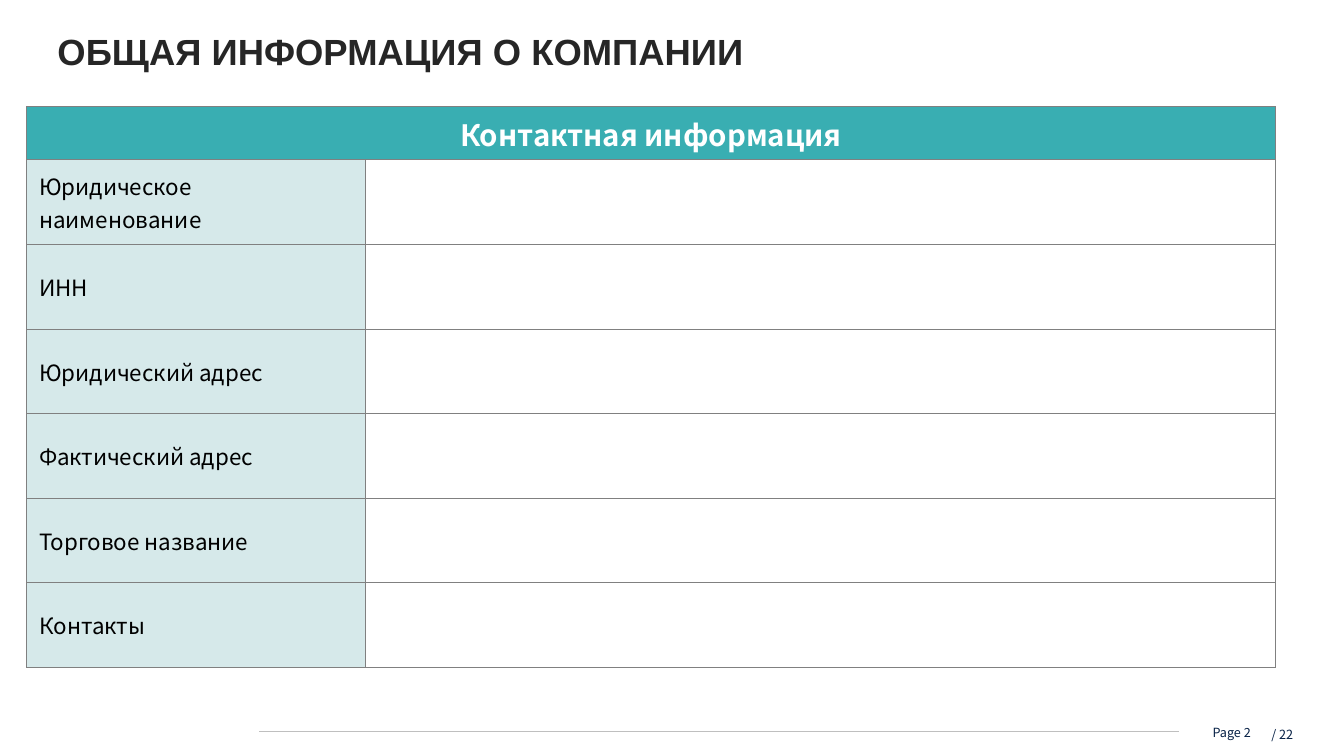
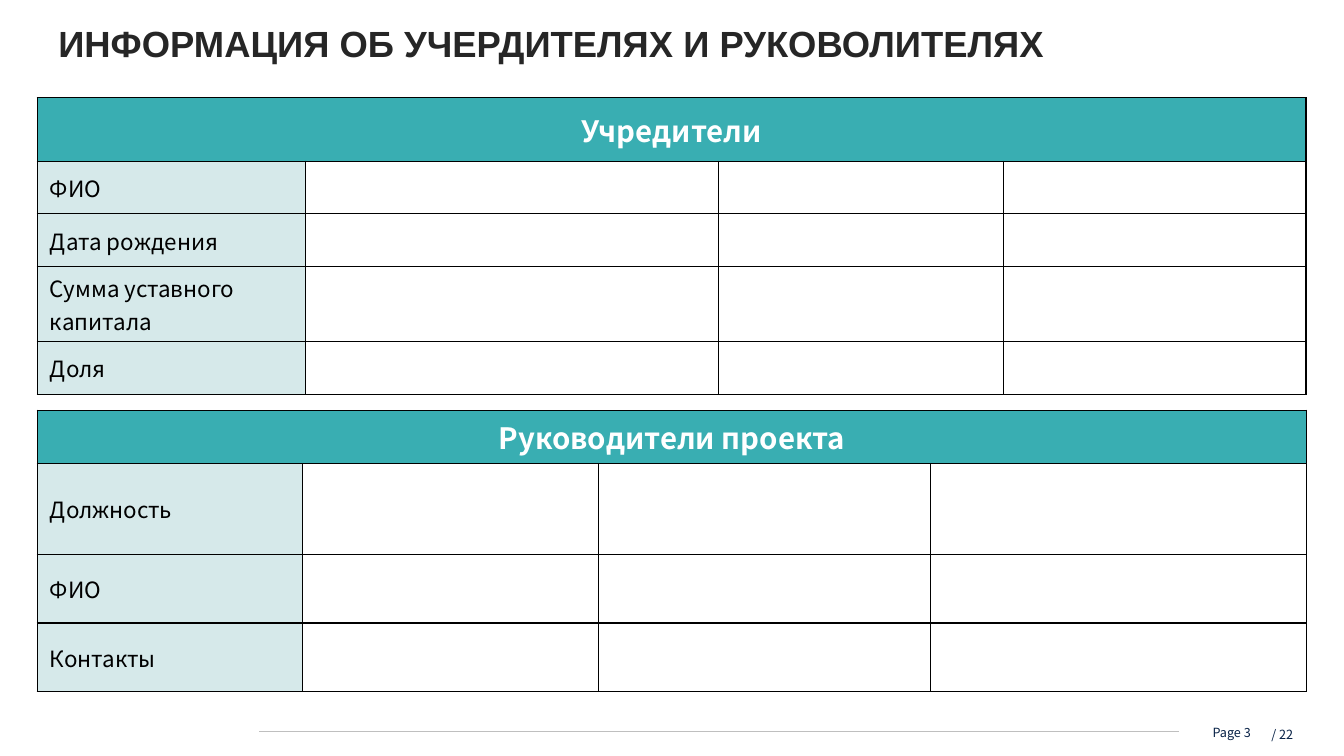
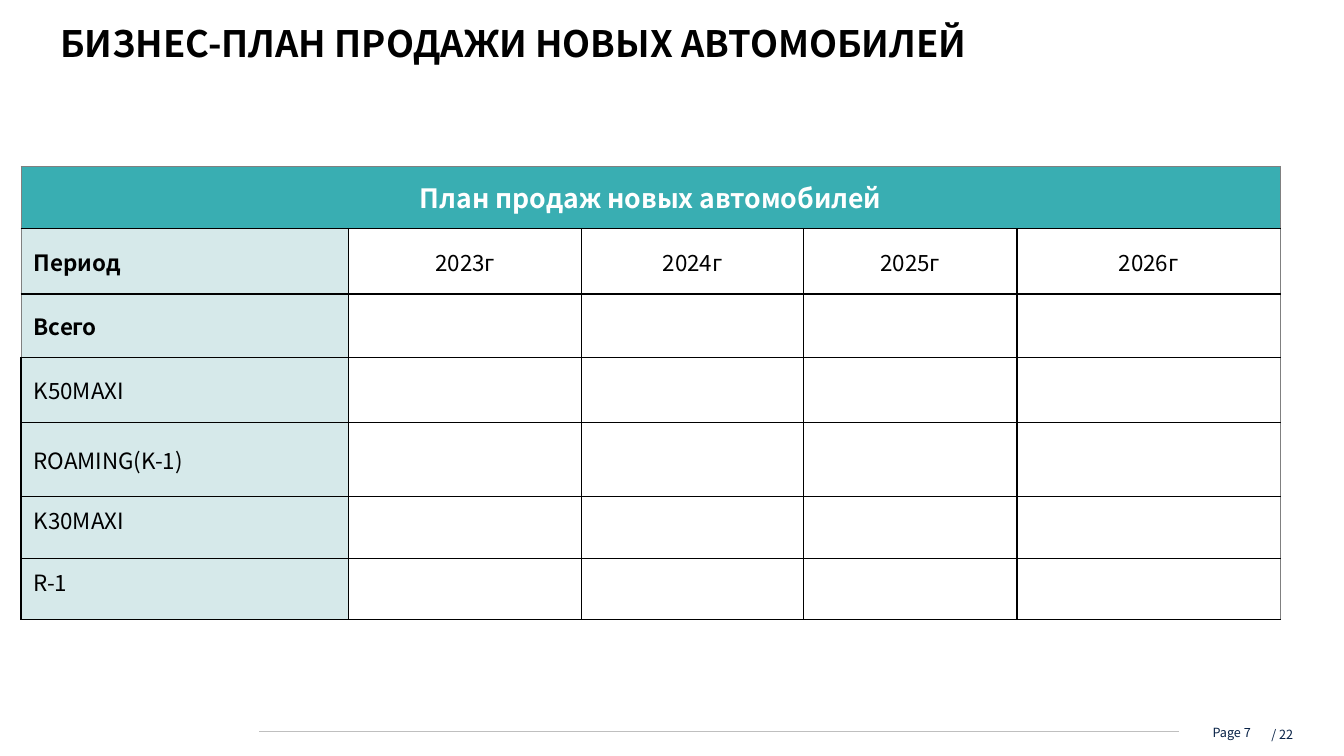
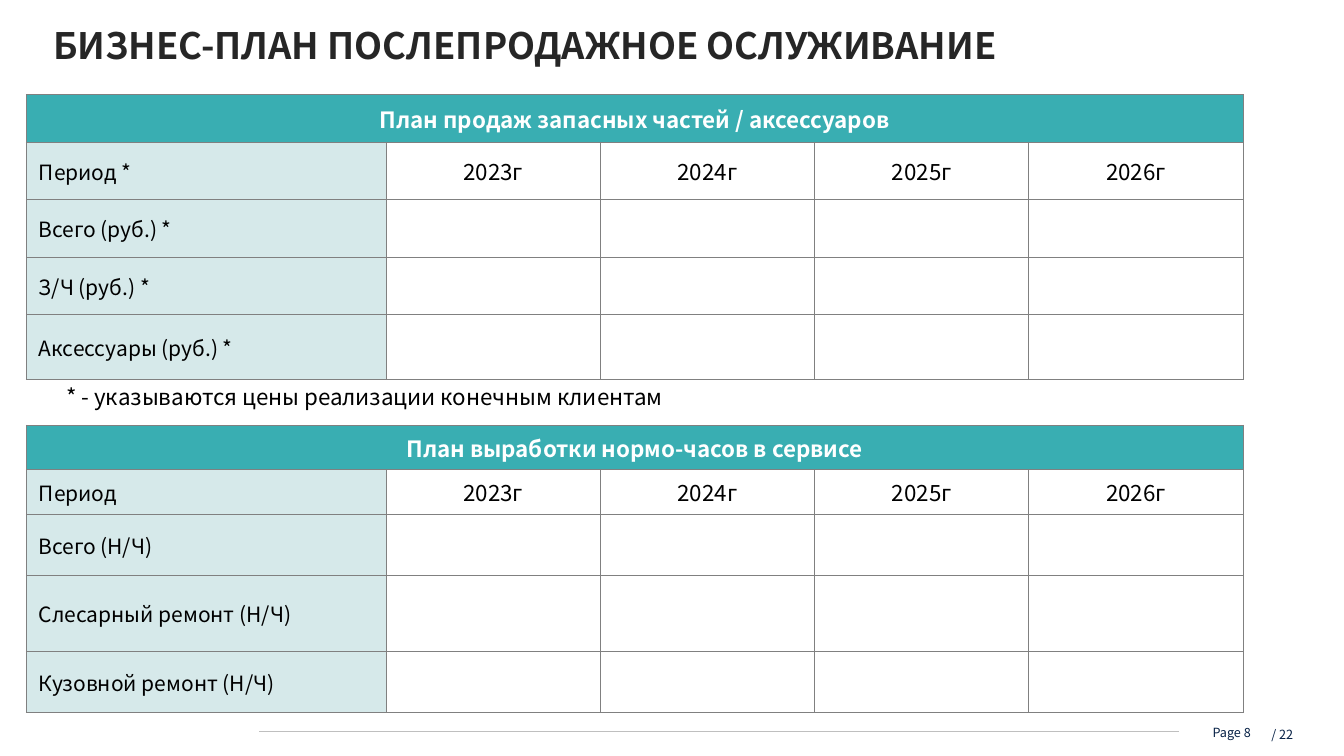
from dataclasses import dataclass

import pptx
import pptx.dml.color
import pptx.enum.shapes
import pptx.enum.text
import pptx.presentation
import pptx.shapes.connector
import pptx.slide
import pptx.table
import pptx.text.text
import pptx.util
from lxml import etree
from pptx.oxml.ns import qn
from pptx.util import Cm

SANS, HEADING = "Noto Sans CJK SC", "Arial"
TEAL, PALE, WHITE, BLACK = "39AEB2", "D6E9EA", "FFFFFF", "000000"
INK, NAVY, GREY, RULE = "262626", "072146", "808080", "BFBFBF"
LEFT = pptx.enum.text.PP_ALIGN.LEFT
CENTER = pptx.enum.text.PP_ALIGN.CENTER
RIGHT = pptx.enum.text.PP_ALIGN.RIGHT
MIDDLE = pptx.enum.text.MSO_ANCHOR.MIDDLE
PAGE_TOTAL = 22
YEARS = ("2023г", "2024г", "2025г", "2026г")


@dataclass(frozen=True)
class Row:
    label: str
    height: float
    values: tuple[str, ...] = ()
    bold: bool = False
    line_points: float | None = None


@dataclass(frozen=True)
class Form:
    """A table with a merged heading, a label column and cells to fill in (cm)."""
    heading: str
    left: float
    top: float
    columns: tuple[float, ...]
    heading_height: float
    rows: tuple[Row, ...]
    heading_size: float = 21
    label_size: float = 16
    border: str = GREY
    grey_left_rows: int = 0  # with a black grid: rows whose outer left edge is grey


@dataclass(frozen=True)
class Title:
    text: str
    left: float
    top: float
    font: str = SANS
    color: str = INK
    spacing: float | None = None


@dataclass(frozen=True)
class Note:
    text: str
    left: float
    top: float
    width: float


@dataclass(frozen=True)
class Page:
    number: int
    title: Title
    forms: tuple[Form, ...]
    notes: tuple[Note, ...] = ()


def rgb(color: str) -> pptx.dml.color.RGBColor:
    return pptx.dml.color.RGBColor.from_string(color)


def write(frame: pptx.text.text.TextFrame, text: str, *, size: float,
          font: str = SANS, color: str = BLACK, bold: bool = False,
          align=LEFT, spacing=None) -> None:
    para = frame.paragraphs[0]
    para.alignment = align
    if spacing is not None:
        para.line_spacing = spacing
    span = para.add_run()
    span.text = text
    span.font.name = font
    span.font.size = pptx.util.Pt(size)
    span.font.bold = bold
    span.font.color.rgb = rgb(color)


def add_text(slide: pptx.slide.Slide, text: str, left: float, top: float,
             width: float, height: float, *, inset: tuple[float, float] = (0.25, 0.13),
             wrap: bool = True, **text_format) -> None:
    box = slide.shapes.add_textbox(Cm(left), Cm(top), Cm(width), Cm(height))
    frame = box.text_frame
    frame.word_wrap = wrap
    frame.margin_left = frame.margin_right = Cm(inset[0])
    frame.margin_top = frame.margin_bottom = Cm(inset[1])
    write(frame, text, **text_format)


def set_borders(cell: pptx.table._Cell, colors: dict[str, str]) -> None:
    """Draw cell sides; colors maps L, R, T, B to a colour."""
    properties = cell._tc.get_or_add_tcPr()
    for position, (side, color) in enumerate(colors.items()):
        points = 0.75 if color == GREY else 1
        line = etree.Element(qn(f"a:ln{side}"), w=str(pptx.util.Pt(points)))
        fill = etree.SubElement(line, qn("a:solidFill"))
        etree.SubElement(fill, qn("a:srgbClr"), val=color)
        properties.insert(position, line)


def border_colors(form: Form, row: int, column: int) -> dict[str, str]:
    colors = dict.fromkeys("LRTB", form.border)
    if form.grey_left_rows:
        if row == 0:
            colors["T"] = GREY
        if column == 0 and row < form.grey_left_rows:
            colors["L"] = GREY
        if column == len(form.columns) - 1 or row == 0:
            colors["R"] = GREY
    return colors


def add_form(slide: pptx.slide.Slide, form: Form) -> None:
    heights = [form.heading_height] + [row.height for row in form.rows]
    table = slide.shapes.add_table(
        len(heights), len(form.columns), Cm(form.left), Cm(form.top),
        Cm(sum(form.columns)), Cm(sum(heights))).table
    table.first_row = table.horz_banding = False
    for column, width in zip(table.columns, form.columns):
        column.width = Cm(width)
    for line, height in zip(table.rows, heights):
        line.height = Cm(height)

    for r in range(len(heights)):
        for c in range(len(form.columns)):
            cell = table.cell(r, c)
            cell.margin_left = cell.margin_right = Cm(0.32)
            cell.margin_top = cell.margin_bottom = Cm(0.13)
            cell.vertical_anchor = MIDDLE
            cell.fill.solid()
            cell.fill.fore_color.rgb = rgb(TEAL if r == 0 else PALE if c == 0 else WHITE)
            set_borders(cell, border_colors(form, r, c))

    heading = table.cell(0, 0)
    heading.merge(table.cell(0, len(form.columns) - 1))
    write(heading.text_frame, form.heading, size=form.heading_size,
          color=WHITE, bold=True, align=CENTER)
    for r, row in enumerate(form.rows, start=1):
        spacing = pptx.util.Pt(row.line_points) if row.line_points else None
        write(table.cell(r, 0).text_frame, row.label, size=form.label_size,
              bold=row.bold, spacing=spacing)
        for c, value in enumerate(row.values, start=1):
            write(table.cell(r, c).text_frame, value, size=16, align=CENTER)


def add_footer(slide: pptx.slide.Slide, number: int) -> None:
    add_text(slide, f"Page {number}", 28.07, 18.26, 3.45, 0.84, inset=(0, 0),
             size=9, color=NAVY, align=RIGHT)
    add_text(slide, f"/ {PAGE_TOTAL}", 30.15, 18.03, 2.54, 0.79, inset=(0.1, 0.1),
             size=9, color=NAVY, align=RIGHT, spacing=1.5)
    rule = slide.shapes.add_connector(
        pptx.enum.shapes.MSO_CONNECTOR.STRAIGHT, Cm(6.53), Cm(18.44), Cm(29.72), Cm(18.44))
    rule.line.color.rgb = rgb(RULE)
    rule.line.width = pptx.util.Pt(0.5)
    etree.SubElement(rule._element.spPr, qn("a:effectLst"))


def add_page(deck: pptx.presentation.Presentation, page: Page) -> None:
    slide = deck.slides.add_slide(deck.slide_layouts[6])
    add_footer(slide, page.number)
    title = page.title
    add_text(slide, title.text, title.left, title.top, 30.94, 1.57, size=26, bold=True,
             font=title.font, color=title.color, spacing=title.spacing)
    for form in page.forms:
        add_form(slide, form)
    for note in page.notes:
        add_text(slide, note.text, note.left, note.top, note.width, 0.94,
                 wrap=False, size=16)


SERVICE_COLUMNS = (9.07,) + (5.4,) * 4

PAGES = (
    Page(2, Title("ОБЩАЯ ИНФОРМАЦИЯ О КОМПАНИИ", 1.2, 0.74, HEADING, spacing=0.9), (
        Form("Контактная информация", 0.67, 2.69, (8.53, 22.94), 1.34, tuple(
            Row(label, 2.13) for label in (
                "Юридическое наименование", "ИНН", "Юридический адрес",
                "Фактический адрес", "Торговое название", "Контакты"))),
    )),
    Page(3, Title("ИНФОРМАЦИЯ ОБ УЧЕРДИТЕЛЯХ И РУКОВОЛИТЕЛЯХ", 1.22, 0.4, HEADING), (
        Form("Учредители", 0.94, 2.46, (6.76, 10.41, 7.18, 7.62), 1.6, (
            Row("ФИО", 1.33),
            Row("Дата рождения", 1.33),
            Row("Сумма уставного капитала", 1.89),
            Row("Доля", 1.33)), border=BLACK),
        Form("Руководители проекта", 0.94, 10.34, (6.68, 7.47, 8.36, 9.47), 1.34, (
            Row("Должность", 2.29),
            Row("ФИО", 1.73),
            Row("Контакты", 1.73)), border=BLACK),
    )),
    Page(7, Title("БИЗНЕС-ПЛАН ПРОДАЖИ НОВЫХ АВТОМОБИЛЕЙ", 1.27, 0.4, color=BLACK), (
        Form("План продаж новых автомобилей", 0.53, 4.19,
             (8.26, 5.87, 5.59, 5.38, 6.63), 1.57, (
                 Row("Период", 1.65, YEARS, bold=True),
                 Row("Всего", 1.6, bold=True),
                 Row("K50MAXI", 1.63),
                 Row("ROAMING(K-1)", 1.88),
                 Row("K30MAXI", 1.55, line_points=12),
                 Row("R-1", 1.55, line_points=12)),
             heading_size=19, border=BLACK, grey_left_rows=3),
    )),
    Page(8, Title("БИЗНЕС-ПЛАН ПОСЛЕПРОДАЖНОЕ ОСЛУЖИВАНИЕ", 1.09, 0.58, spacing=0.9), (
        Form("План продаж запасных частей / аксессуаров", 0.66, 2.39, SERVICE_COLUMNS, 1.19, (
            Row("Период *", 1.45, YEARS),
            Row("Всего (руб.) *", 1.45),
            Row("З/Ч (руб.) *", 1.45),
            Row("Аксессуары (руб.) *", 1.63)), heading_size=16, label_size=15),
        Form("План выработки нормо-часов в сервисе", 0.66, 10.72, SERVICE_COLUMNS, 1.12, (
            Row("Период", 1.12, YEARS),
            Row("Всего (Н/Ч)", 1.55),
            Row("Слесарный ремонт (Н/Ч)", 1.9),
            Row("Кузовной ремонт (Н/Ч)", 1.55)), heading_size=16, label_size=15),
    ), (Note("* - указываются цены реализации конечным клиентам", 1.42, 9.53, 16.38),)),
)


def main() -> None:
    deck = pptx.Presentation()
    deck.slide_width, deck.slide_height = Cm(33.87), Cm(19.05)
    for page in PAGES:
        add_page(deck, page)
    deck.save("out.pptx")


if __name__ == "__main__":
    main()
